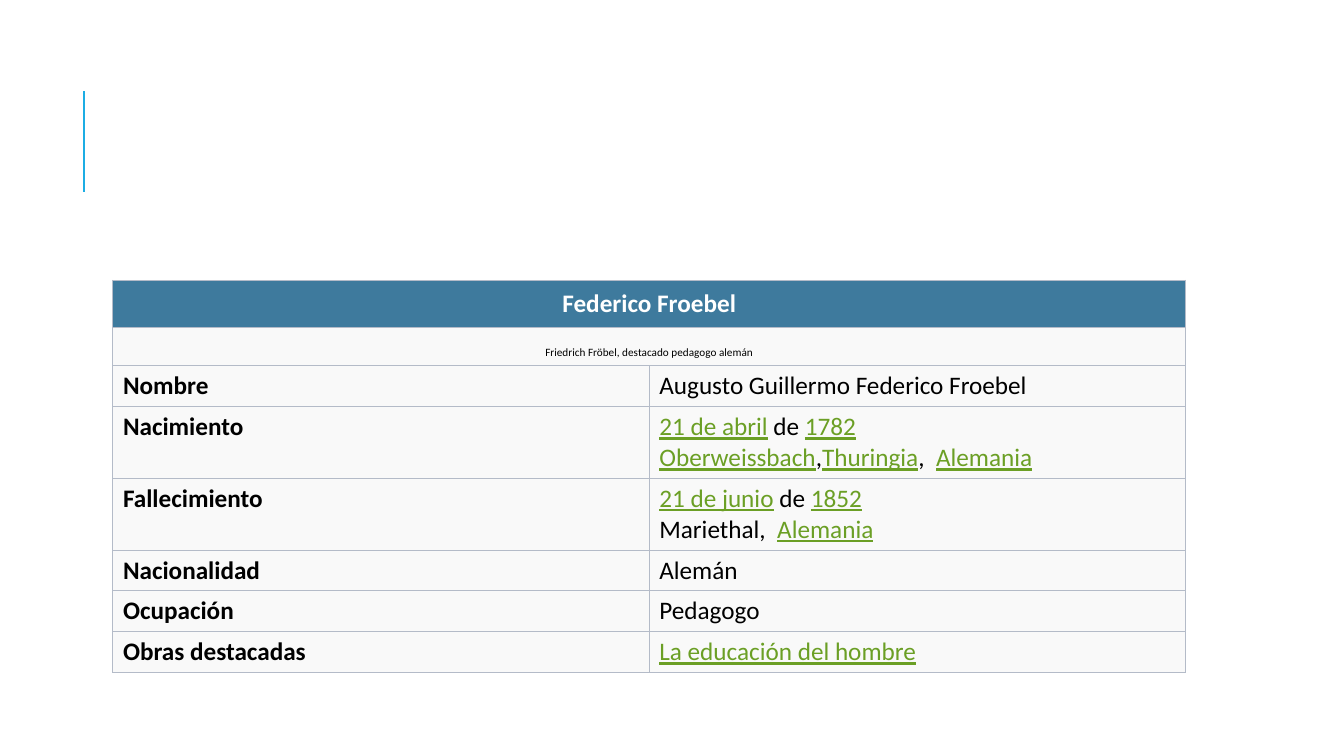
import pptx
import pptx.dml.color
import pptx.enum.shapes
import pptx.enum.text
import pptx.oxml
import pptx.oxml.ns
import pptx.util

Inches = pptx.util.Inches
Anchor = pptx.enum.text.MSO_ANCHOR
Align = pptx.enum.text.PP_ALIGN

THEME = {
    "font": "Calibri", "body": 18, "caption": 8,
    "accent": "1CADE4", "header": "3E7A9D", "cell": "F9F9F9", "border": "B4BBC8",
    "text": "000000", "light": "FFFFFF", "link": "6B9F25",
}
NAMESPACE = pptx.oxml.ns.nsdecls("a")


def color(name):
    return pptx.dml.color.RGBColor.from_string(THEME[name])


def write(cell, text, size="body", ink="text", bold=False, align=Align.LEFT,
          anchor=Anchor.MIDDLE, fill="cell"):
    """Border, fill and fill in a cell; text between underscores looks like a link."""
    properties = cell._tc.get_or_add_tcPr()
    for side in ("lnL", "lnR", "lnT", "lnB"):
        properties.append(pptx.oxml.parse_xml(
            f'<a:{side} {NAMESPACE} w="{pptx.util.Pt(0.75)}"><a:solidFill>'
            f'<a:srgbClr val="{THEME["border"]}"/></a:solidFill></a:{side}>'))
    cell.fill.solid()
    cell.fill.fore_color.rgb = color(fill)
    cell.vertical_anchor = anchor
    paragraph = cell.text_frame.paragraphs[0]
    paragraph.alignment = align
    for line_number, line in enumerate(text.split("\n")):
        if line_number:
            paragraph.add_line_break()
        for piece_number, piece in enumerate(line.split("_")):
            if not piece:
                continue
            linked = piece_number % 2 == 1
            run = paragraph.add_run()
            run.text = piece
            run.font.name = THEME["font"]
            run.font.size = pptx.util.Pt(THEME[size])
            run.font.bold = bold
            run.font.underline = linked
            run.font.color.rgb = color("link" if linked else ink)


presentation = pptx.Presentation()
presentation.slide_width = Inches(13.33)
presentation.slide_height = Inches(7.5)
slide = presentation.slides.add_slide(presentation.slide_layouts[6])

title_rule = slide.shapes.add_connector(
    pptx.enum.shapes.MSO_CONNECTOR.STRAIGHT,
    Inches(0.83), Inches(1.9), Inches(0.83), Inches(0.9))
title_rule.line.color.rgb = color("accent")
title_rule.line.width = pptx.util.Pt(1.5)
title_rule._element.spPr.append(pptx.oxml.parse_xml(f"<a:effectLst {NAMESPACE}/>"))

facts = [
    ("Nombre", "Augusto Guillermo Federico Froebel"),
    ("Nacimiento", "_21 de abril_ de _1782_\n_Oberweissbach_,_Thuringia_,  _Alemania_"),
    ("Fallecimiento", "_21 de junio_ de _1852_\nMariethal,  _Alemania_"),
    ("Nacionalidad", "Alemán"),
    ("Ocupación", "Pedagogo"),
    ("Obras destacadas", "_La educación del hombre_"),
]
heights = [0.47, 0.38] + [0.71 if "\n" in value else 0.4 for _, value in facts]
column_width = 5.32
table = slide.shapes.add_table(
    len(heights), 2, Inches(1.12), Inches(2.78),
    Inches(2 * column_width), Inches(sum(heights))).table
for column in table.columns:
    column.width = Inches(column_width)
for row, height in zip(table.rows, heights):
    row.height = Inches(height)

for row_number in range(2):
    table.cell(row_number, 0).merge(table.cell(row_number, 1))
write(table.cell(0, 0), "Federico Froebel", ink="light", bold=True,
      align=Align.CENTER, fill="header")
caption = table.cell(1, 0)
write(caption, "Friedrich Fröbel, destacado pedagogo alemán", size="caption",
      align=Align.CENTER, anchor=Anchor.BOTTOM)
caption.margin_left = caption.margin_right = Inches(0.06)
caption.margin_top = caption.margin_bottom = Inches(0.06)

for row_number, (label, value) in enumerate(facts, start=2):
    write(table.cell(row_number, 0), label, bold=True, anchor=Anchor.TOP)
    write(table.cell(row_number, 1), value)

presentation.save("out.pptx")
